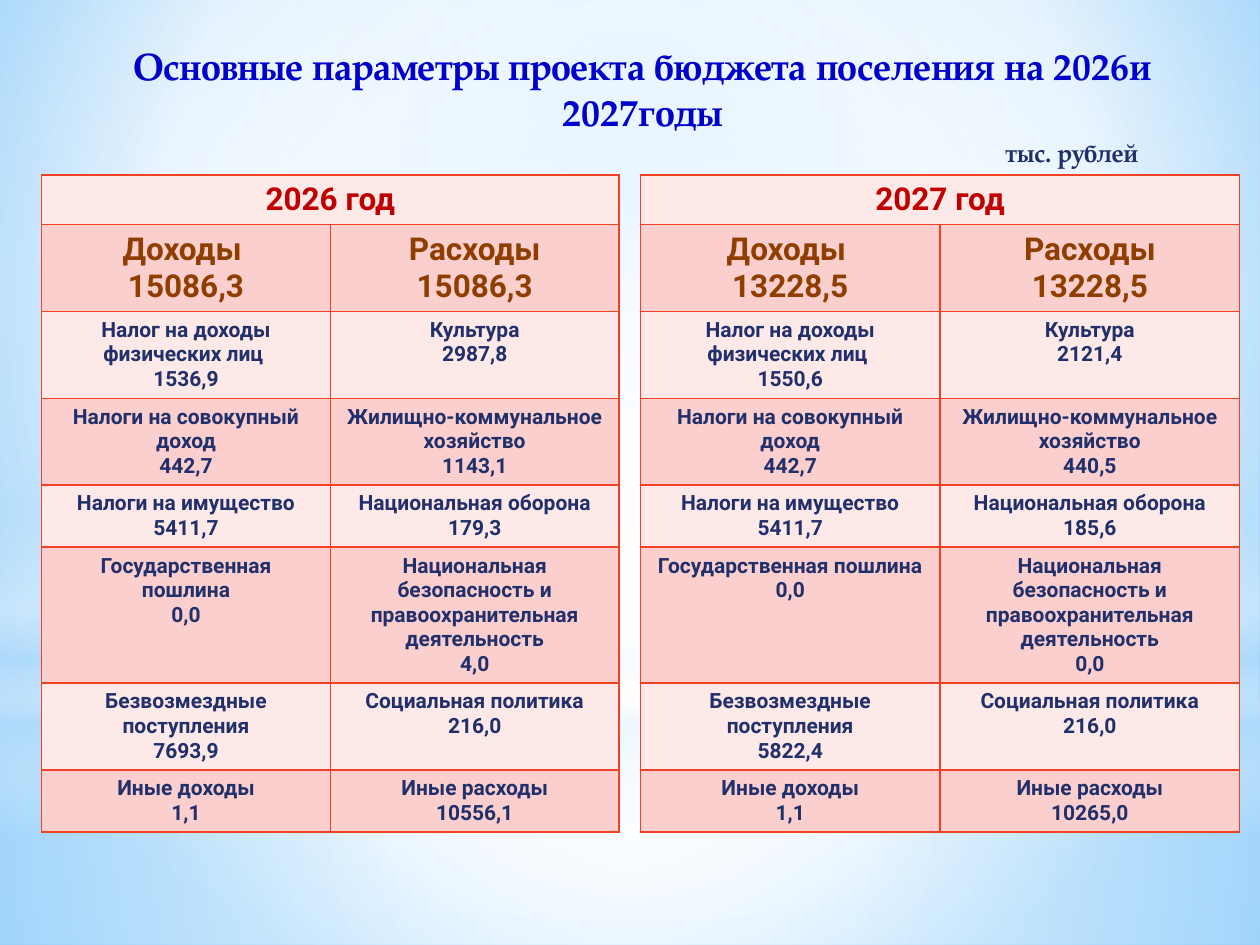
from pptx import Presentation
from pptx.dml.color import RGBColor
from pptx.enum.shapes import MSO_SHAPE as SHAPE
from pptx.enum.text import MSO_ANCHOR as ANCHOR, MSO_AUTO_SIZE as AUTO, PP_ALIGN as ALIGN
from pptx.oxml import parse_xml
from pptx.oxml.ns import nsdecls, qn
from pptx.util import Cm, Pt

BLUE = RGBColor(0x00, 0x00, 0xCC)
NAVY = RGBColor(0x21, 0x30, 0x6A)
RED = RGBColor(0xC0, 0x00, 0x00)
BROWN = RGBColor(0x90, 0x3E, 0x00)
BORDER = RGBColor(0xF1, 0x41, 0x24)
PINK = RGBColor(0xFA, 0xCF, 0xCD)
PALE = RGBColor(0xFC, 0xE9, 0xE8)
WHITE = RGBColor(0xFF, 0xFF, 0xFF)
SKY = RGBColor(0xB4, 0xDC, 0xFA)
BG_LIGHT = RGBColor(0x9E, 0xD5, 0xFF)
BG_DEEP = RGBColor(0x5B, 0xB9, 0xFF)
SERIF, SANS = "TeX Gyre Pagella", "Roboto"
CENTRE = (50, 50, 50, 50)


def set_gradient(fill, parent, stops, focus=None):
    fill.gradient()
    gs = "".join(
        f'<a:gs pos="{pos * 1000}"><a:srgbClr val="{color}">'
        f'<a:alpha val="{alpha * 1000}"/></a:srgbClr></a:gs>'
        for pos, color, alpha in stops)
    if focus:
        l, t, r, b = (v * 1000 for v in focus)
        way = (f'<a:path path="circle"><a:fillToRect l="{l}" t="{t}" '
               f'r="{r}" b="{b}"/></a:path>')
    else:
        way = '<a:lin ang="5400000" scaled="0"/>'
    grad = parse_xml(f'<a:gradFill {nsdecls("a")} rotWithShape="1">'
                     f'<a:gsLst>{gs}</a:gsLst>{way}</a:gradFill>')
    parent.replace(parent.find(qn("a:gradFill")), grad)


def style_cell(cell, text, size, color, fill):
    cell.text = text
    for p in cell.text_frame.paragraphs:
        p.alignment = ALIGN.CENTER
        p.font.name, p.font.size, p.font.bold = SANS, Pt(size), True
        p.font.color.rgb = color
    cell.fill.solid()
    cell.fill.fore_color.rgb = fill
    tcPr = cell._tc.get_or_add_tcPr()
    for i, side in enumerate("LRTB"):
        tcPr.insert(i, parse_xml(
            f'<a:ln{side} {nsdecls("a")} w="12700"><a:solidFill>'
            f'<a:srgbClr val="{BORDER}"/></a:solidFill></a:ln{side}>'))


prs = Presentation()
prs.slide_width, prs.slide_height = Cm(25.4), Cm(19.05)
s = prs.slides.add_slide(prs.slide_layouts[5])

bg_fill = s.background.fill
bg_fill.solid()
set_gradient(bg_fill, s._element.find(".//" + qn("p:bgPr")),
             [(0, BG_LIGHT, 100), (60, WHITE, 100), (100, BG_DEEP, 100)],
             (20, 10, 20, 60))

backdrop = [
    (SHAPE.RECTANGLE, 14.17, 4.88,
     [(0, WHITE, 91), (37, WHITE, 76), (100, SKY, 79)], CENTRE),
    (SHAPE.RECTANGLE, 0, 14.17,
     [(0, WHITE, 89), (48, WHITE, 62), (100, SKY, 79)], CENTRE),
    (SHAPE.RECTANGLE, 10.46, 6.35,
     [(0, WHITE, 0), (29, WHITE, 30), (45, SKY, 40), (55, WHITE, 26),
      (65, SKY, 60), (100, WHITE, 0)], None),
    (SHAPE.OVAL, 4.45, 14.17, [(0, WHITE, 100), (56, WHITE, 0)], CENTRE),
]
for kind, top, height, stops, focus in backdrop:
    sp = s.shapes.add_shape(kind, 0, Cm(top), prs.slide_width, Cm(height))
    sp.shadow.inherit = False
    sp.line.fill.background()
    set_gradient(sp.fill, sp._element.spPr, stops, focus)

title = s.shapes.title
s.shapes._spTree.append(title._element)
title.left, title.top, title.width, title.height = Cm(0.89), Cm(0.74), Cm(24.13), Cm(1.6)
tf = title.text_frame
tf.word_wrap, tf.auto_size, tf.vertical_anchor = True, AUTO.NONE, ANCHOR.TOP
tf.text = "Основные параметры проекта бюджета поселения на 2026и 2027годы\nтыс. рублей"
heading, unit = tf.paragraphs
for p, size, color, spacing in ((heading, 21.6, BLUE, 26), (unit, 14.4, NAVY, 19)):
    p.alignment = ALIGN.CENTER
    p.line_spacing = Pt(spacing)
    p.space_before = Pt(0)
    p.font.name, p.font.size, p.font.bold = SERIF, Pt(size), True
    p.font.color.rgb = color
unit._p.get_or_add_pPr().set("marL", str(Cm(17.3)))

labels = [
    ("Доходы ", "Расходы"),
    ("Налог на доходы физических лиц ", "Культура"),
    ("Налоги на совокупный доход", "Жилищно-коммунальное хозяйство"),
    ("Налоги на имущество", "Национальная оборона"),
    ("Государственная пошлина",
     "Национальная безопасность и правоохранительная деятельность"),
    ("Безвозмездные поступления", "Социальная политика"),
    ("Иные доходы", "Иные расходы"),
]
budgets = [
    ("2026 год", 0.84, 11.64,
     [("15086,3", "15086,3"), ("1536,9", "2987,8"), ("442,7", "1143,1"),
      ("5411,7", "179,3"), ("0,0", "4,0"), ("7693,9", "216,0"),
      ("1,1", "10556,1")]),
    ("2027 год", 12.91, 12.08,
     [("13228,5", "13228,5"), ("1550,6", "2121,4"), ("442,7", "440,5"),
      ("5411,7", "185,6"), ("0,0", "0,0"), ("5822,4", "216,0"),
      ("1,1", "10265,0")]),
]
row_heights = [0.99, 1.75, 1.75, 1.75, 1.25, 2.74, 1.75, 1.25]

for year, left, width, values in budgets:
    table = s.shapes.add_table(len(row_heights), 2, Cm(left), Cm(3.53),
                               Cm(width), Cm(sum(row_heights))).table
    for row, height in zip(table.rows, row_heights):
        row.height = Cm(height)
    table.cell(0, 0).merge(table.cell(0, 1))
    for col, text in enumerate((year, "")):
        style_cell(table.cell(0, col), text, 18, RED, PALE)
    for i, (names, amounts) in enumerate(zip(labels, values), 1):
        size, color = (18, BROWN) if i == 1 else (12, NAVY)
        for col, (name, amount) in enumerate(zip(names, amounts)):
            style_cell(table.cell(i, col), f"{name}\n{amount}", size, color,
                       PINK if i % 2 else PALE)

prs.save("out.pptx")
